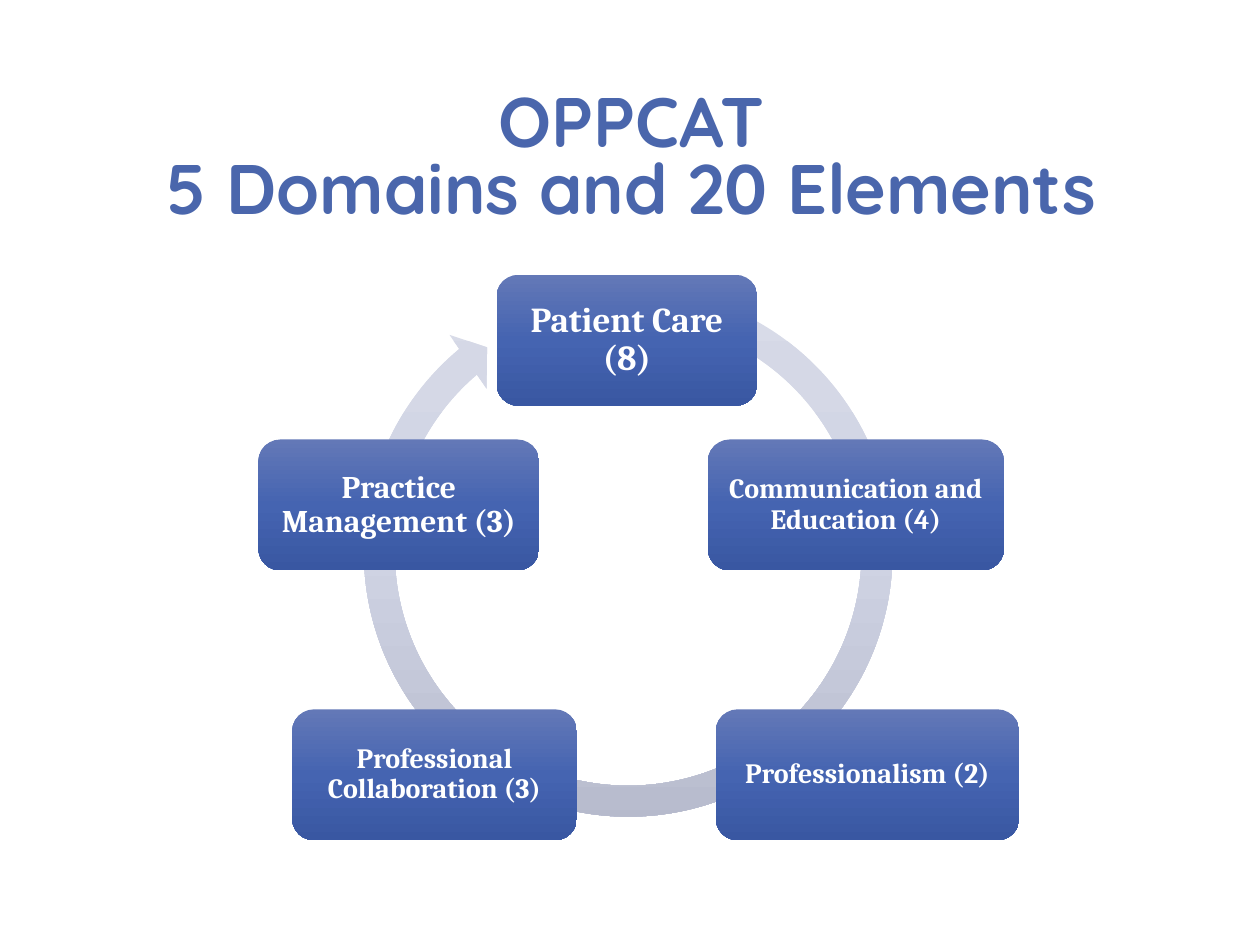
"""Build the OPPCAT slide: five domains arranged around a circular arrow."""
from copy import deepcopy
from dataclasses import dataclass

from pptx import Presentation
from pptx import util as u
from pptx.dml import color
from pptx.enum import shapes, text
from pptx.oxml import ns


@dataclass(frozen=True)
class Theme:
    """Colours, fonts and type sizes of the slide."""
    title_color: str = "4A66AC"
    label_color: str = "FFFFFF"
    ring_fill: tuple = ("D8DBE8", "CFD3E3", "B6BACC")
    domain_fill: tuple = ("6378B7", "4564B1", "3957A2")
    title_font: str = "Quicksand"
    label_font: str = "Cambria"
    title_size: int = 40
    large: int = 20
    medium: int = 18
    small: int = 16


THEME = Theme()
RING_ADJUSTMENTS = (0.055, 3.307, 137.971, 173.731, 0.058)
TOP_ROW, MIDDLE_ROW, BOTTOM_ROW = 5.54, 8.86, 14.3
DOMAIN_HEIGHT = 2.64
DOMAINS = (
    ("Patient Care (8)", 10.01, TOP_ROW, 5.26, THEME.large),
    ("Communication and Education (4)", 14.27, MIDDLE_ROW, 5.97, THEME.small),
    ("Professionalism (2)", 14.43, BOTTOM_ROW, 6.12, THEME.small),
    ("Professional Collaboration (3)", 5.89, BOTTOM_ROW, 5.74, THEME.small),
    ("Practice\vManagement (3)", 5.21, MIDDLE_ROW, 5.66, THEME.medium),
)


def fill_gradient(shape, colors):
    """Fill a shape from top to bottom with evenly spaced colours."""
    shape.fill.gradient()
    shape.fill.gradient_angle = 270
    stop_list = shape._element.spPr.find(".//" + ns.qn("a:gsLst"))
    while len(stop_list) < len(colors):
        stop_list.append(deepcopy(stop_list[0]))
    for index, (stop, value) in enumerate(zip(shape.fill.gradient_stops, colors)):
        stop.position = index / (len(colors) - 1)
        stop.color.rgb = color.RGBColor.from_string(value)


def write_text(frame, content, font_name, size, value, spacing):
    """Write one centred bold paragraph into a text frame."""
    frame.word_wrap = True
    frame.auto_size = text.MSO_AUTO_SIZE.NONE
    paragraph = frame.paragraphs[0]
    paragraph.text = content
    paragraph.alignment = text.PP_ALIGN.CENTER
    paragraph.line_spacing = spacing
    paragraph.font.name = font_name
    paragraph.font.size = u.Pt(size)
    paragraph.font.bold = True
    paragraph.font.color.rgb = color.RGBColor.from_string(value)


def set_title(slide, content):
    """Place and format the slide title."""
    title = slide.shapes.title
    title.left, title.top = u.Cm(1.3), u.Cm(0.91)
    title.width, title.height = u.Cm(22.86), u.Cm(3.81)
    title.text_frame.vertical_anchor = text.MSO_ANCHOR.BOTTOM
    write_text(title.text_frame, content, THEME.title_font,
               THEME.title_size, THEME.title_color, 0.8)


def add_gradient_shape(slide, kind, left, top, width, height, colors):
    """Add a flat borderless preset shape with a gradient."""
    shape = slide.shapes.add_shape(kind, u.Cm(left), u.Cm(top), u.Cm(width), u.Cm(height))
    shape.shadow.inherit = False
    shape.line.fill.background()
    fill_gradient(shape, colors)
    return shape


def add_ring(slide):
    """Add the circular arrow behind the domains."""
    ring = add_gradient_shape(slide, shapes.MSO_SHAPE.CIRCULAR_ARROW,
                              6.99, 5.46, 11.35, 11.35, THEME.ring_fill)
    for index, value in enumerate(RING_ADJUSTMENTS):
        ring.adjustments[index] = value


def add_domain(slide, label, left, top, width, size):
    """Add one rounded domain box with its label."""
    box = add_gradient_shape(slide, shapes.MSO_SHAPE.ROUNDED_RECTANGLE,
                             left, top, width, DOMAIN_HEIGHT, THEME.domain_fill)
    frame = box.text_frame
    frame.margin_left = frame.margin_right = u.Cm(0.19)
    frame.margin_top = frame.margin_bottom = u.Cm(0.19)
    frame.vertical_anchor = text.MSO_ANCHOR.MIDDLE
    write_text(frame, label, THEME.label_font, size, THEME.label_color, 0.9)


def main():
    """Build and save the presentation."""
    presentation = Presentation()
    presentation.slide_width, presentation.slide_height = u.Cm(25.4), u.Cm(19.05)
    slide = presentation.slides.add_slide(presentation.slide_layouts[5])
    set_title(slide, "OPPCAT\v5 Domains and 20 Elements")
    add_ring(slide)
    for domain in DOMAINS:
        add_domain(slide, *domain)
    presentation.save("out.pptx")


if __name__ == "__main__":
    main()
